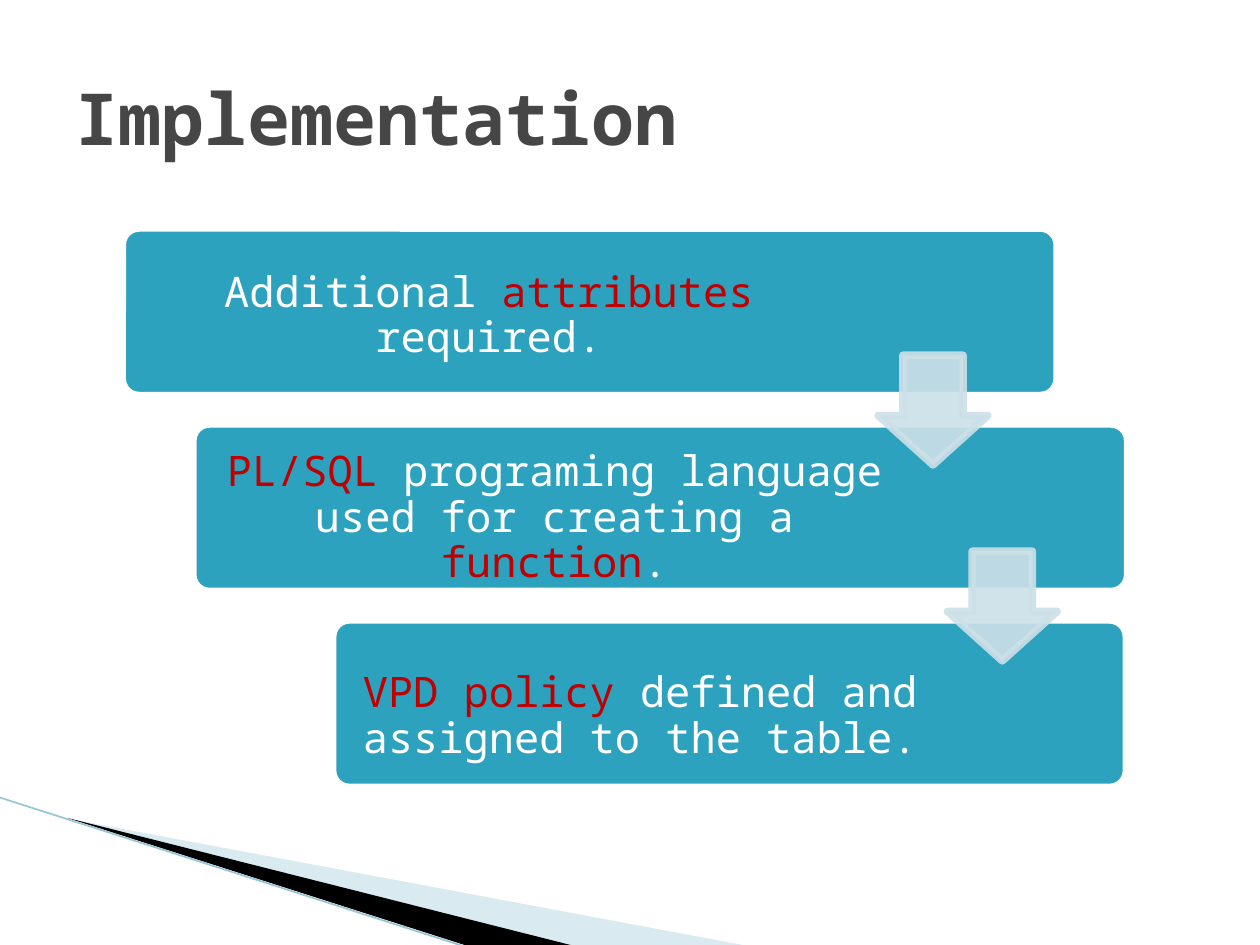
from pptx import Presentation
from pptx.dml.color import RGBColor
from pptx.enum.shapes import MSO_CONNECTOR as Conn, MSO_SHAPE as Kind
from pptx.enum.text import MSO_ANCHOR as Anchor, PP_ALIGN as Align
from pptx.oxml.ns import qn
from pptx.util import Inches, Pt
from lxml.etree import SubElement

FONT = "Noto Sans Mono"
WHITE, RED, BLUE, PALE = "FFFFFF", "C00000", "2DA2BF", "CDE0E8"


def paint(fill, color, alpha=100):
    fill.solid()
    fill.fore_color.rgb = RGBColor.from_string(color)
    if alpha < 100:
        node = next(fill._xPr.iter(qn("a:srgbClr")))
        SubElement(node, qn("a:alpha"), val=str(alpha * 1000))


def write(frame, runs, size=24, bold=False, align=Align.CENTER, gap=0.9, pad=0.1):
    """Fill a text frame with one paragraph of (text, color) runs."""
    frame.word_wrap = True
    frame.vertical_anchor = Anchor.MIDDLE
    frame.margin_left = frame.margin_right = Inches(pad)
    frame.margin_top = frame.margin_bottom = Inches(pad)
    para = frame.paragraphs[0]
    para.alignment = align
    para.line_spacing = gap
    for text, color in runs:
        run = para.add_run()
        run.text = text
        run.font.name = FONT
        run.font.size = Pt(size)
        run.font.bold = bold
        paint(run.font.fill, color)


class Deck:
    def __init__(self):
        self.prs = Presentation()
        self.prs.slide_width = Inches(10)
        self.prs.slide_height = Inches(7.5)
        self.slide = self.prs.slides.add_slide(self.prs.slide_layouts[6])
        self.shapes = self.slide.shapes

    def wedge(self, points, color, alpha=100):
        first, *rest = [(Inches(x), Inches(y)) for x, y in points]
        form = self.shapes.build_freeform(*first)
        form.add_line_segments(rest)
        shape = form.convert_to_shape()
        shape.shadow.inherit = False
        shape.line.fill.background()
        paint(shape.fill, color, alpha)

    def line(self, start, end, color, width):
        ends = [Inches(v) for v in (*start, *end)]
        line = self.shapes.add_connector(Conn.STRAIGHT, *ends)
        paint(line.line.fill, color)
        line.line.width = Pt(width)
        SubElement(line._element.spPr, qn("a:effectLst"))

    def shape(self, kind, box, adjust, fill, edge, alpha=100):
        shape = self.shapes.add_shape(kind, *[Inches(v) for v in box])
        shape.shadow.inherit = False
        for i, value in enumerate(adjust):
            shape.adjustments[i] = value
        paint(shape.fill, fill, alpha)
        paint(shape.line.fill, edge, alpha)
        shape.line.width = Pt(4.33)

    def text(self, box, runs, **style):
        area = self.shapes.add_textbox(*[Inches(v) for v in box])
        write(area.text_frame, runs, **style)


def main():
    deck = Deck()

    # Corner wedges
    deck.wedge([(0.55, 6.5), (5.95, 7.51), (4.56, 7.51)], "A0CBDC", 40)
    deck.wedge([(0.53, 6.49), (4.57, 7.51), (3.72, 7.51)], "000000")
    deck.line((0, 6.33), (3.71, 7.52), "97C5D8", 0.95)

    # Title
    deck.text((0.5, 0.3, 9, 1.25), [("Implementation", "464646")],
              size=41, bold=True, align=Align.LEFT, gap=1)

    # Steps: left, width, text width, text drop, runs
    steps = [
        (0.97, 7.42, 5.74, 0.03,
         [("Additional ", WHITE), ("attributes", RED), (" required.", WHITE)]),
        (1.53, 7.42, 5.66, 0.08,
         [("PL/SQL", RED), (" programing language used for creating a ", WHITE),
          ("function", RED), (".", WHITE)]),
        (2.64, 6.3, 4.8, 0.1,
         [("VPD policy ", RED), ("defined and assigned to the table.", WHITE)]),
    ]
    top, pitch, high = 1.81, 1.555, 1.33
    for i, (left, width, wide, drop, runs) in enumerate(steps):
        y = top + i * pitch
        deck.shape(Kind.ROUNDED_RECTANGLE, (left, y, width, high), [0.1], BLUE, WHITE)
        deck.text((left + 0.04, y + 0.04 + drop, wide, 1.26), runs)

    # Arrows between steps
    for i in range(len(steps) - 1):
        box = (6.97 + i * 0.55, 2.82 + i * pitch, 0.87, 0.87)
        deck.shape(Kind.DOWN_ARROW, box, [0.55, 0.45], PALE, PALE, 90)

    deck.prs.save("out.pptx")


if __name__ == "__main__":
    main()
